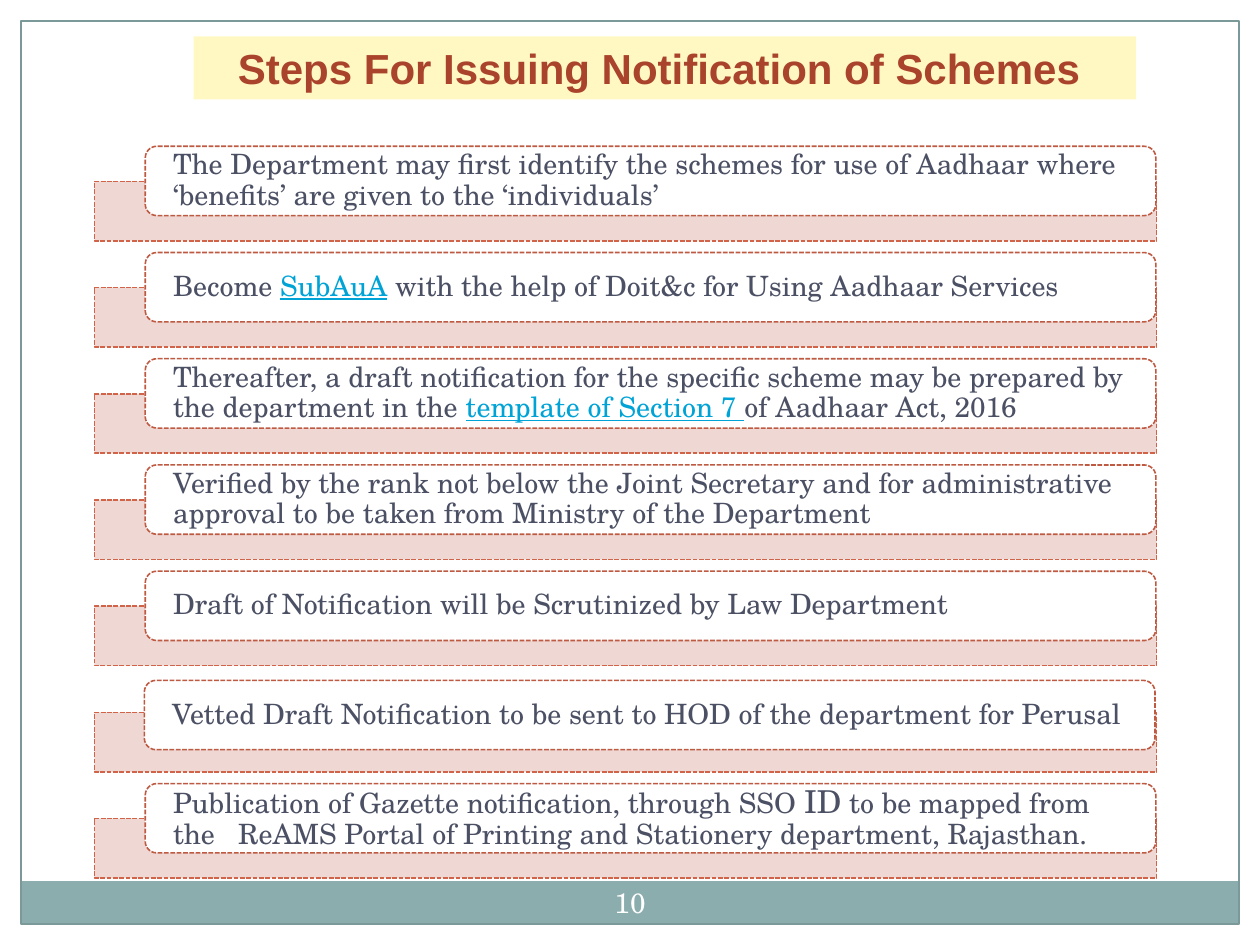
import dataclasses
import typing

import lxml.etree
import pptx
import pptx.dml.color
import pptx.enum.dml
import pptx.enum.shapes
import pptx.enum.text
import pptx.oxml.ns
import pptx.util

Pt = pptx.util.Pt
RGB = pptx.dml.color.RGBColor.from_string
SHAPE = pptx.enum.shapes.MSO_SHAPE
ANCHOR = pptx.enum.text.MSO_ANCHOR
ALIGN = pptx.enum.text.PP_ALIGN


@dataclasses.dataclass(frozen=True)
class Theme:
    white: str = "FFFFFF"
    frame: str = "7C999A"
    footer: str = "8CADAE"
    title: str = "A9432B"
    title_fill: str = "FFF8C2"
    bar: str = "EED3D0"
    bar_line: str = "D16349"
    card_line: str = "BE5A42"
    text: str = "4B5064"
    link: str = "00A3D6"
    title_font: str = "Arial"
    body_font: str = "TeX Gyre Schola"
    title_size: float = 24
    body_size: float = 16
    large_size: float = 18


THEME = Theme()


class Box(typing.NamedTuple):
    left: float
    top: float
    width: float
    height: float

    def lengths(self) -> list:
        return [Pt(v) for v in self]


@dataclasses.dataclass(frozen=True)
class Span:
    text: str
    size: float = THEME.body_size
    link: bool = False


@dataclasses.dataclass(frozen=True)
class Step:
    spans: tuple
    dx: float = 0
    dy: float = 0


STEPS = (
    Step((Span("The Department may first identify the schemes for use of Aadhaar "
               "where ‘benefits’ are given to the ‘individuals’"),)),
    Step((Span("Become "), Span("SubAuA", link=True),
          Span(" with the help of Doit&c for Using Aadhaar Services"))),
    Step((Span("Thereafter, a draft notification for the specific scheme may be "
               "prepared by the department in the "),
          Span("template of Section 7 ", link=True),
          Span("of Aadhaar Act, 2016"))),
    Step((Span("Verified by the rank not below the Joint Secretary and for "
               "administrative approval to be taken from Ministry of the Department"),)),
    Step((Span("Draft of Notification will be Scrutinized by Law Department"),)),
    Step((Span("Vetted Draft Notification to be sent to HOD of the department "
               "for Perusal"),), dx=-0.5, dy=1.7),
    Step((Span("Publication of Gazette notification, through SSO "),
          Span("ID", size=THEME.large_size),
          Span(" to be mapped from the   ReAMS Portal of Printing and Stationery "
               "department, Rajasthan."))),
)
BAR = Box(54, 103.6, 607, 34)
CARD = Box(83, 83.6, 577.5, 39.6)
PITCH = 60.7


def style(r, font: str, size: float, color: str) -> None:
    r.font.name = font
    r.font.size = Pt(size)
    r.font.color.rgb = RGB(color)


def add_box(s, kind, box: Box, fill: typing.Optional[str] = None,
            line: typing.Optional[str] = None, width: float = 0.9, dashed: bool = False):
    sp = s.shapes.add_shape(kind, *box.lengths())
    sp.shadow.inherit = False
    if fill:
        sp.fill.solid()
        sp.fill.fore_color.rgb = RGB(fill)
    else:
        sp.fill.background()
    if line:
        sp.line.color.rgb = RGB(line)
        sp.line.width = Pt(width)
        if dashed:
            sp.line.dash_style = pptx.enum.dml.MSO_LINE.SQUARE_DOT
    else:
        sp.line.fill.background()
    return sp


def set_opacity(sp, percent: int) -> None:
    qn = pptx.oxml.ns.qn
    color = sp._element.spPr.find(qn("a:solidFill")).find(qn("a:srgbClr"))
    lxml.etree.SubElement(color, qn("a:alpha"), val=str(percent * 1000))


def set_margins(tf, horizontal: float, vertical: float) -> None:
    tf.margin_left = tf.margin_right = Pt(horizontal)
    tf.margin_top = tf.margin_bottom = Pt(vertical)


def add_step(s, index: int, step: Step) -> None:
    bar = add_box(s, SHAPE.RECTANGLE, BAR._replace(top=BAR.top + index * PITCH),
                  THEME.bar, THEME.bar_line, dashed=True)
    set_opacity(bar, 90)
    box = CARD._replace(left=CARD.left + step.dx, top=CARD.top + index * PITCH + step.dy)
    card = add_box(s, SHAPE.ROUNDED_RECTANGLE, box, THEME.white, THEME.card_line, dashed=True)
    tf = card.text_frame
    tf.word_wrap = True
    tf.vertical_anchor = ANCHOR.MIDDLE
    set_margins(tf, 14, 0)
    p = tf.paragraphs[0]
    p.alignment = ALIGN.LEFT
    p.line_spacing = 0.9
    for span in step.spans:
        r = p.add_run()
        r.text = span.text
        style(r, THEME.body_font, span.size, THEME.link if span.link else THEME.text)
        if span.link:
            r.font.underline = True


def add_title(s, text: str, box: Box) -> None:
    sp = s.shapes.title
    sp.left, sp.top, sp.width, sp.height = box.lengths()
    sp.fill.solid()
    sp.fill.fore_color.rgb = RGB(THEME.title_fill)
    tf = sp.text_frame
    tf.text = text
    tf.word_wrap = True
    tf.auto_size = pptx.enum.text.MSO_AUTO_SIZE.NONE
    tf.vertical_anchor = ANCHOR.MIDDLE
    p = tf.paragraphs[0]
    p.alignment = ALIGN.CENTER
    style(p.runs[0], THEME.title_font, THEME.title_size, THEME.title)
    p.runs[0].font.bold = True


def add_page_number(s, text: str, box: Box) -> None:
    tf = s.shapes.add_textbox(*box.lengths()).text_frame
    tf.text = text
    tf.word_wrap = True
    tf.vertical_anchor = ANCHOR.MIDDLE
    set_margins(tf, 3.6, 3.6)
    p = tf.paragraphs[0]
    p.alignment = ALIGN.CENTER
    style(p.runs[0], THEME.body_font, THEME.body_size, THEME.white)


def main() -> None:
    prs = pptx.Presentation()
    prs.slide_width, prs.slide_height = Pt(720), Pt(540)
    s = prs.slides.add_slide(prs.slide_layouts[5])
    add_title(s, "Steps For Issuing Notification of Schemes ", Box(110.7, 20.8, 538.6, 36))
    add_box(s, SHAPE.RECTANGLE, Box(12, 503.5, 695.5, 24.5), THEME.footer)
    add_box(s, SHAPE.RECTANGLE, Box(12, 12, 696, 516), line=THEME.frame, width=0.75)
    add_page_number(s, "10", Box(336, 498.5, 48, 34.5))
    for index, step in enumerate(STEPS):
        add_step(s, index, step)
    prs.save("out.pptx")


if __name__ == "__main__":
    main()
